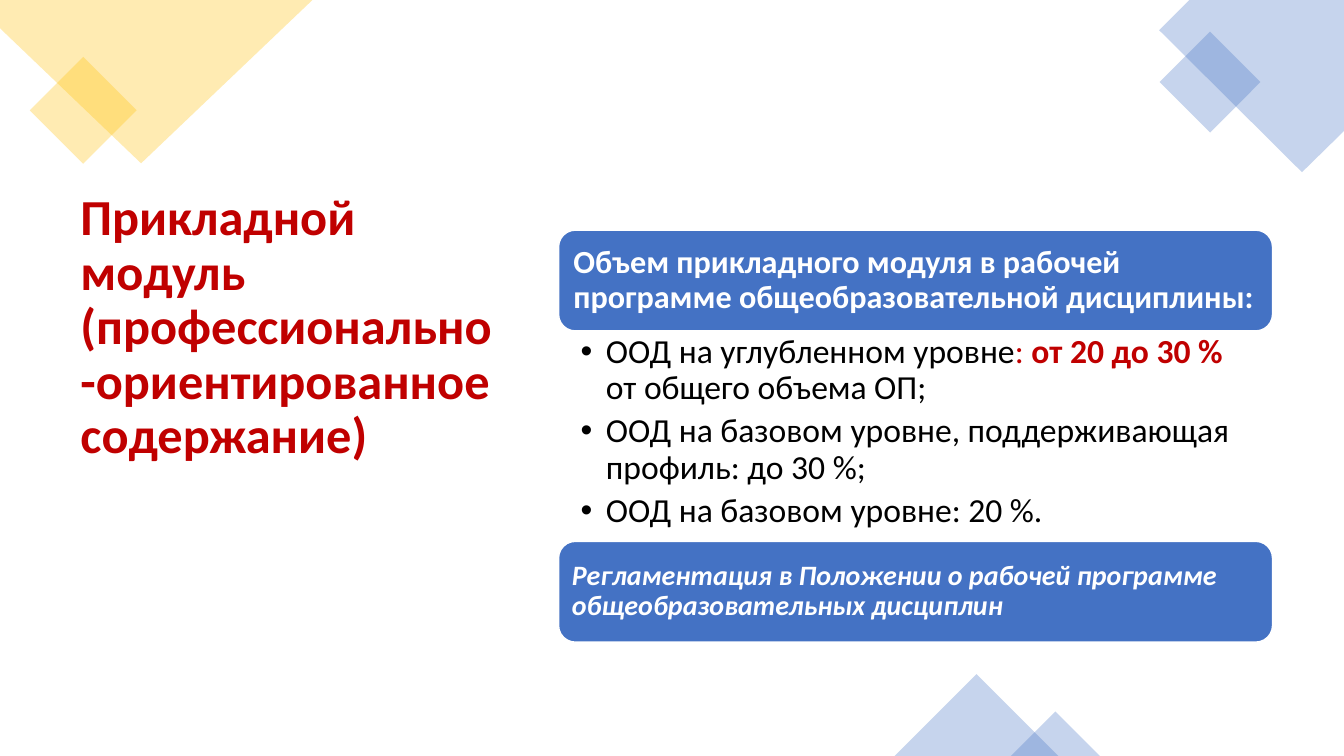
from dataclasses import dataclass

from lxml.etree import SubElement
from pptx import Presentation
from pptx.dml.color import RGBColor
from pptx.enum.shapes import MSO_SHAPE
from pptx.enum.text import MSO_ANCHOR
from pptx.oxml.ns import qn
from pptx.util import Emu, Inches, Pt

COLUMNS, ROWS = 160, 90
CELL = Inches(1) / 12
RED, BLUE, YELLOW, WHITE, BLACK = "C00000", "4472C4", "FFC000", "FFFFFF", "000000"
CONTENT_LEFT, CONTENT_WIDTH = 66.5, 85
PANEL_ROWS = 12


@dataclass(frozen=True)
class Area:
    column: float
    row: float
    columns: float
    rows: float


@dataclass(frozen=True)
class Phrase:
    text: str
    size: float
    color: str
    bold: bool = False
    italic: bool = False


@dataclass(frozen=True)
class Ornament:
    kind: MSO_SHAPE
    area: Area
    color: str
    rotation: float = 0


@dataclass(frozen=True)
class Corner:
    points: tuple[tuple[float, float], ...]
    color: str


@dataclass(frozen=True)
class Panel:
    row: float
    inset: float
    phrase: Phrase


ORNAMENTS = (
    Ornament(MSO_SHAPE.RECTANGLE, Area(5.4, 8.64, 9, 9), YELLOW, 45),
    Ornament(MSO_SHAPE.RECTANGLE, Area(139.8, 5.52, 8.5, 8.5), BLUE, 45),
    Ornament(MSO_SHAPE.ISOSCELES_TRIANGLE, Area(106.5, 80.25, 19.5, 9.75), BLUE),
    Ornament(MSO_SHAPE.ISOSCELES_TRIANGLE, Area(120.35, 84.7, 10.6, 5.3), BLUE),
)
CORNERS = (
    Corner(((0, 0), (37.2, 0), (16.8, 19.44), (0, 3.36)), YELLOW),
    Corner(((141.6, 0), (COLUMNS, 0), (COLUMNS, 15.6), (155, 20.5), (138, 3.6)), BLUE),
)
PANELS = (
    Panel(27.4, 1.2, Phrase(
        "Объем прикладного модуля в рабочей программе общеобразовательной дисциплины:",
        23, WHITE, bold=True)),
    Panel(64.45, 1, Phrase(
        "Регламентация в Положении о рабочей программе общеобразовательных дисциплин",
        20, WHITE, bold=True, italic=True)),
)
TITLE = Phrase("Прикладной модуль (профессионально-ориентированное содержание)", 36, RED, bold=True)
VOLUMES = (
    (
        Phrase("ООД на углубленном уровне", 24, BLACK),
        Phrase(": ", 24, RED),
        Phrase("от 20 до 30 % ", 24, RED, bold=True),
        Phrase("от общего объема ОП;", 24, BLACK),
    ),
    (Phrase("ООД на базовом уровне, поддерживающая профиль: до 30 %;", 24, BLACK),),
    (Phrase("ООД на базовом уровне: 20 %.", 24, BLACK),),
)


def cells(count: float) -> Emu:
    return Emu(round(count * CELL))


def box(area: Area) -> tuple[Emu, ...]:
    return tuple(cells(n) for n in (area.column, area.row, area.columns, area.rows))


def paint(target, color: str) -> None:
    target.solid()
    target.fore_color.rgb = RGBColor.from_string(color)


def make_translucent(shape, color: str) -> None:
    shape.shadow.inherit = False
    paint(shape.fill, color)
    shape.line.fill.background()
    tint = shape.fill._xPr.find(qn("a:solidFill"))[0]
    SubElement(tint, qn("a:alpha")).set("val", "30000")


def draw_ornament(shapes, ornament: Ornament) -> None:
    shape = shapes.add_shape(ornament.kind, *box(ornament.area))
    shape.rotation = ornament.rotation
    make_translucent(shape, ornament.color)


def draw_corner(shapes, corner: Corner) -> None:
    start, *others = corner.points
    builder = shapes.build_freeform(*map(cells, start))
    builder.add_line_segments([tuple(map(cells, point)) for point in others], close=True)
    make_translucent(builder.convert_to_shape(), corner.color)


def prepare_frame(frame, anchor: MSO_ANCHOR, left: float, top: float, right: float) -> None:
    frame.word_wrap = True
    frame.vertical_anchor = anchor
    frame.margin_left, frame.margin_right = cells(left), cells(right)
    frame.margin_top = frame.margin_bottom = cells(top)


def write(paragraph, phrases: tuple[Phrase, ...]) -> None:
    paragraph.line_spacing = 0.9
    for phrase in phrases:
        run = paragraph.add_run()
        run.text = phrase.text
        run.font.name = "Calibri"
        run.font.size = Pt(phrase.size)
        run.font.bold = phrase.bold
        run.font.italic = phrase.italic
        paint(run.font.fill, phrase.color)


def add_bullet(paragraph) -> None:
    properties = paragraph._p.get_or_add_pPr()
    properties.set("marL", str(cells(3)))
    properties.set("indent", str(cells(-3)))
    SubElement(properties, qn("a:buFont")).set("typeface", "Arial")
    SubElement(properties, qn("a:buChar")).set("char", "•")


def draw_title(shapes) -> None:
    frame = shapes.add_textbox(*box(Area(8.4, 22.3, 52, 59.3))).text_frame
    prepare_frame(frame, MSO_ANCHOR.TOP, 1.2, 0.6, 1.2)
    write(frame.paragraphs[0], (TITLE,))


def draw_panel(shapes, panel: Panel) -> None:
    area = Area(CONTENT_LEFT, panel.row, CONTENT_WIDTH, PANEL_ROWS)
    shape = shapes.add_shape(MSO_SHAPE.ROUNDED_RECTANGLE, *box(area))
    shape.shadow.inherit = False
    paint(shape.fill, BLUE)
    paint(shape.line.fill, WHITE)
    shape.line.width = Pt(1)
    prepare_frame(shape.text_frame, MSO_ANCHOR.MIDDLE, panel.inset, panel.inset, panel.inset)
    paragraph = shape.text_frame.paragraphs[0]
    paragraph.alignment = 1
    write(paragraph, (panel.phrase,))


def draw_volumes(shapes) -> None:
    area = Area(CONTENT_LEFT, 39.45, CONTENT_WIDTH, 25)
    frame = shapes.add_textbox(*box(area)).text_frame
    prepare_frame(frame, MSO_ANCHOR.TOP, 2.64, 0.36, 2.28)
    for index, phrases in enumerate(VOLUMES):
        paragraph = frame.add_paragraph() if index else frame.paragraphs[0]
        write(paragraph, phrases)
        paragraph.space_after = Pt(5)
        add_bullet(paragraph)


def main() -> None:
    presentation = Presentation()
    presentation.slide_width, presentation.slide_height = cells(COLUMNS), cells(ROWS)
    shapes = presentation.slides.add_slide(presentation.slide_layouts[6]).shapes
    draw_title(shapes)
    for corner in CORNERS:
        draw_corner(shapes, corner)
    for ornament in ORNAMENTS:
        draw_ornament(shapes, ornament)
    for panel in PANELS:
        draw_panel(shapes, panel)
    draw_volumes(shapes)
    presentation.save("out.pptx")


if __name__ == "__main__":
    main()
